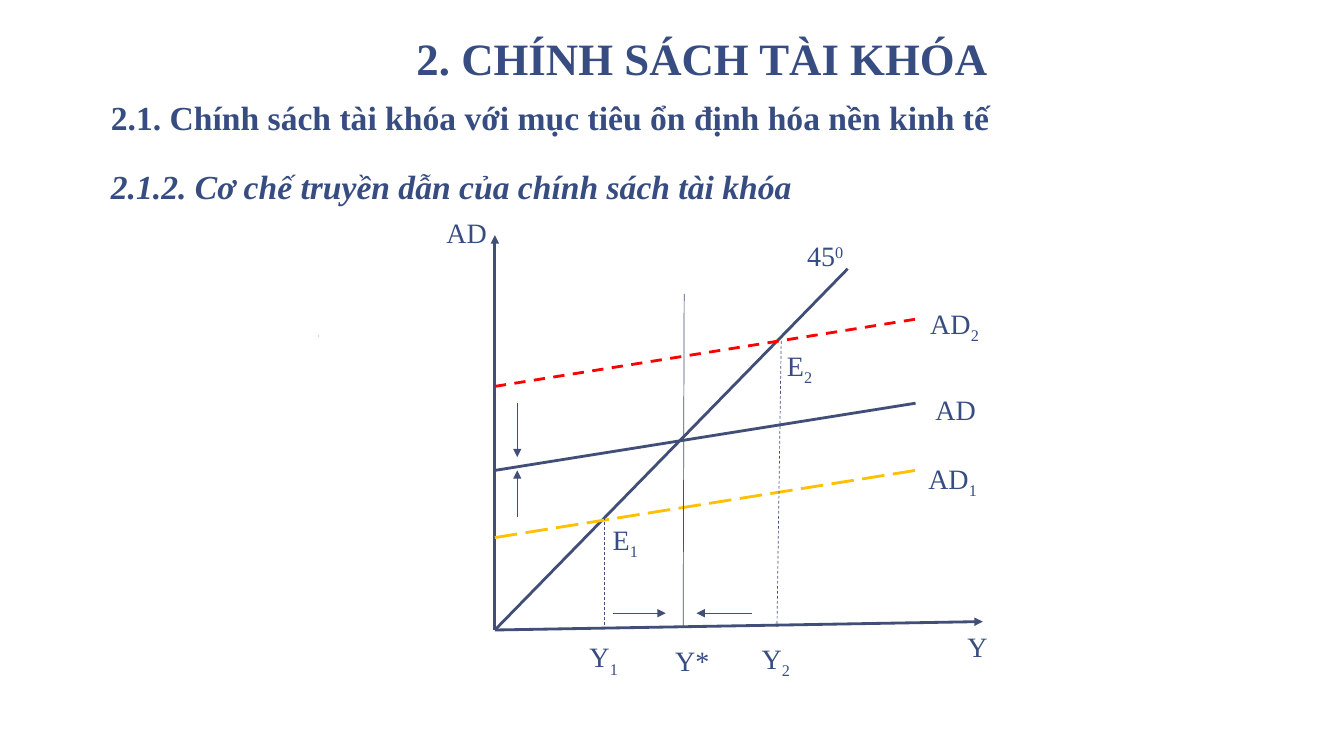
from pptx import Presentation
from pptx.dml.color import RGBColor
from pptx.enum.dml import MSO_LINE
from pptx.enum.shapes import MSO_CONNECTOR, MSO_SHAPE
from pptx.enum.text import MSO_ANCHOR, MSO_AUTO_SIZE, PP_ALIGN
from pptx.oxml.ns import qn
from pptx.util import Pt
from lxml import etree

STRAIGHT = MSO_CONNECTOR.STRAIGHT
RECT = MSO_SHAPE.RECTANGLE
DASH, LONG = MSO_LINE.DASH, MSO_LINE.LONG_DASH
TOP, BOTTOM = MSO_ANCHOR.TOP, MSO_ANCHOR.BOTTOM
CENTER, JUSTIFY = PP_ALIGN.CENTER, PP_ALIGN.JUSTIFY

FONT = "Times New Roman"
COLORS = {"text": "374C81", "line": "414E77", "low": "FFC000", "high": "FF0000"}
LEFT, BASE, RIGHT = 353.5, 450, 654
RISE = 48
SUB, SUPER = -25000, 30000


def color(name):
    return RGBColor.from_string(COLORS[name])


def style(font, size, bold=None, italic=None):
    font.name = FONT
    font.size = Pt(size)
    font.bold = bold
    font.italic = italic
    font.color.rgb = color("text")


def place(holder, left, top, width, height, anchor):
    """Move a placeholder and set its insets and anchor."""
    holder.left, holder.top = Pt(left), Pt(top)
    holder.width, holder.height = Pt(width), Pt(height)
    frame = holder.text_frame
    frame.margin_left = frame.margin_right = Pt(9.4)
    frame.margin_top = frame.margin_bottom = Pt(5)
    frame.auto_size = MSO_AUTO_SIZE.NONE
    frame.word_wrap = True
    frame.vertical_anchor = anchor
    return frame


def add_title(slide, text):
    frame = place(slide.shapes.title, 101.5, -12.2, 800, 77.8, BOTTOM)
    frame.text = text
    para = frame.paragraphs[0]
    para.alignment = CENTER
    para.line_spacing = 0.85
    style(para.runs[0].font, 32, bold=True)


def add_heads(slide, heads):
    frame = place(slide.placeholders[1], 69.8, 49.7, 819.4, 362.9, TOP)
    frame.text = "\n".join(heads)
    for i, para in enumerate(frame.paragraphs):
        props = para._p.get_or_add_pPr()
        props.set("marL", "0")
        props.set("indent", "0")
        etree.SubElement(props, qn("a:buNone"))
        para.alignment = JUSTIFY
        para.line_spacing = 1.5
        para.space_before = Pt(6 if i else 0)
        style(para.runs[0].font, 24, bold=True, italic=i > 0)


def add_line(slide, start, end, width, tint="line", dash=None, arrow=False):
    points = [Pt(v) for v in (*start, *end)]
    link = slide.shapes.add_connector(STRAIGHT, *points)
    link.line.color.rgb = color(tint)
    link.line.width = Pt(width)
    if dash:
        link.line.dash_style = dash
    if arrow:
        tail = etree.SubElement(link.line._get_or_add_ln(), qn("a:tailEnd"))
        tail.set("type", "triangle")
    etree.SubElement(link._element.spPr, qn("a:effectLst"))


def add_label(slide, left, top, text, mark="", shift=SUB, width=57.6):
    """Add a label, with an optional raised or lowered mark after it."""
    box = slide.shapes.add_textbox(Pt(left), Pt(top), Pt(width), Pt(43.2))
    box.text_frame.word_wrap = True
    para = box.text_frame.paragraphs[0]
    for part in filter(None, (text, mark)):
        run = para.add_run()
        run.text = part
        style(run.font, 20)
    if mark:
        run.font._element.set("baseline", str(shift))


def add_dot(slide, left, top):
    dot = slide.shapes.add_shape(RECT, Pt(left), Pt(top), Pt(0.5), Pt(0.5))
    dot.shadow.inherit = False
    dot.fill.solid()
    dot.fill.fore_color.rgb = color("line")
    dot.line.fill.background()


def add_graph(slide):
    origin = (LEFT, BASE)
    add_line(slide, origin, (LEFT, 168), 2, arrow=True)
    add_line(slide, origin, (702, 444), 2, arrow=True)
    add_line(slide, origin, (605.5, 192), 2)

    for level, tint, dash in ((384, "low", LONG), (336, "line", None),
                              (276, "high", DASH)):
        add_line(slide, (LEFT, level), (RIGHT, level - RISE), 2, tint, dash)

    for start, end, dash in (((432, 369.5), (432, 447), DASH),
                             ((558, 243.5), (555, 447.8), DASH),
                             ((488.7, 210), (488, 447), None)):
        add_line(slide, start, end, 0.5, dash=dash)

    for start, end in (((369.5, 288), (369.5, 326.5)),
                       ((369.5, 369.5), (369.5, 336)),
                       ((438, 438), (475.5, 438)),
                       ((537, 438), (497.5, 438))):
        add_line(slide, start, end, 0.5, arrow=True)

    add_label(slide, 311.8, 150.5, "AD")
    add_label(slide, 684, 446.4, "Y")
    add_label(slide, 569.5, 167, "45", "0", SUPER)
    add_label(slide, 657.4, 215.3, "AD", "2")
    add_label(slide, 661, 276.5, "AD")
    add_label(slide, 656, 326.2, "AD", "1")
    add_label(slide, 555, 245.5, "E", "2")
    add_label(slide, 430.6, 369.4, "E", "1")
    add_label(slide, 414, 453.6, "Y", "1", width=36)
    add_label(slide, 537, 455, "Y", "2", width=36)
    add_label(slide, 475.2, 455.8, "Y*", width=52.6)


def main():
    deck = Presentation()
    deck.slide_width, deck.slide_height = Pt(960), Pt(540)
    slide = deck.slides.add_slide(deck.slide_layouts[1])
    add_title(slide, "2. CHÍNH SÁCH TÀI KHÓA")
    add_heads(slide, (
        "2.1. Chính sách tài khóa với mục tiêu ổn định hóa nền kinh tế",
        "2.1.2. Cơ chế truyền dẫn của chính sách tài khóa",
    ))
    add_dot(slide, 227.5, 239.8)
    add_graph(slide)
    deck.save("out.pptx")


if __name__ == "__main__":
    main()
